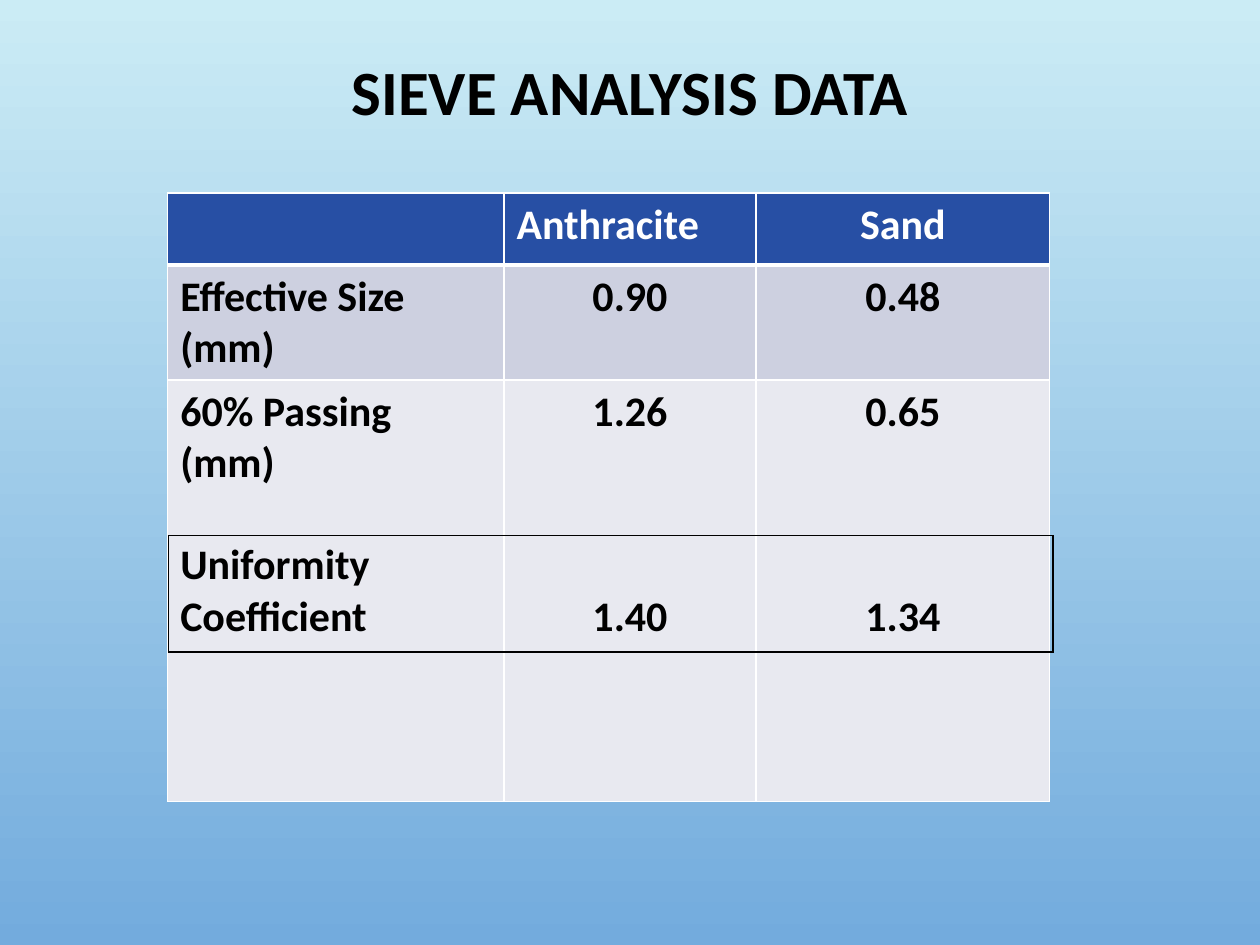
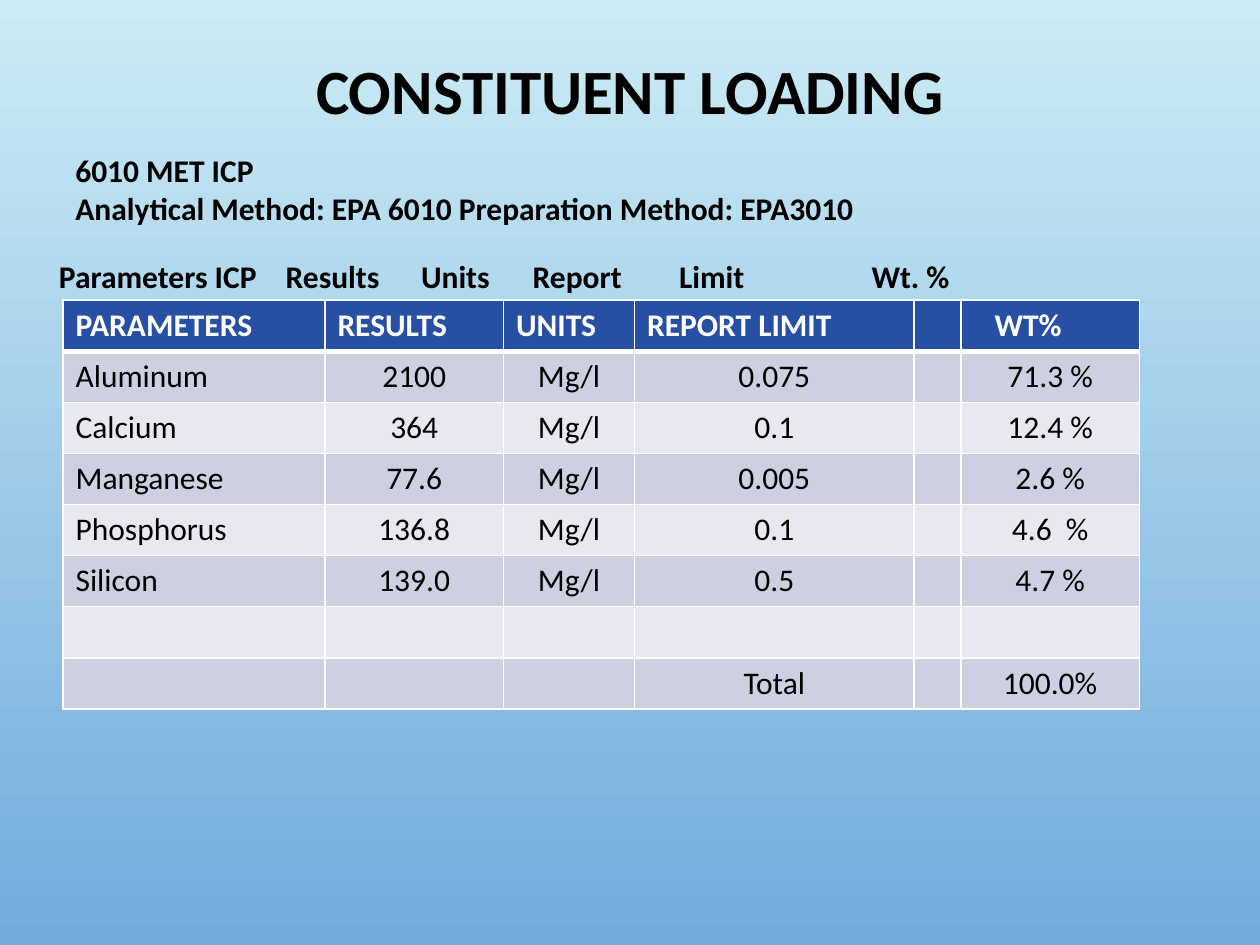
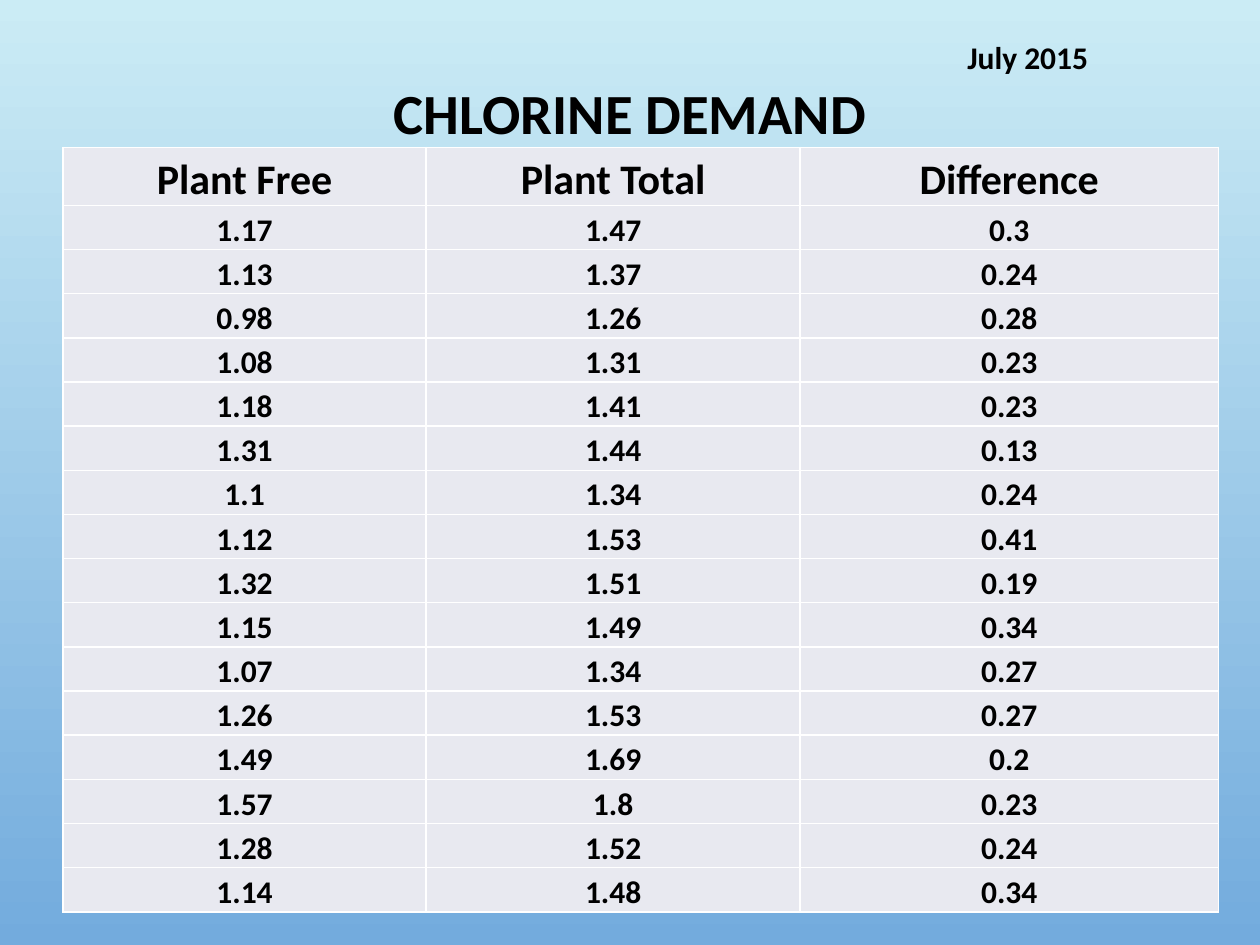
from dataclasses import dataclass

from lxml.etree import SubElement
from pptx import Presentation
from pptx.dml.color import RGBColor
from pptx.enum.text import MSO_ANCHOR as Anchor
from pptx.enum.text import MSO_AUTO_SIZE as AutoSize
from pptx.enum.text import PP_ALIGN as Align
from pptx.oxml.ns import qn
from pptx.util import Cm, Pt


@dataclass(frozen=True)
class Theme:
    """Colours, font and type sizes shared by all slides."""

    font: str = "Calibri"
    ink: str = "000000"
    white: str = "FFFFFF"
    header: str = "274FA4"
    band_dark: str = "CDD0E0"
    band_light: str = "E8E9F0"
    sky_top: str = "CBECF5"
    sky_bottom: str = "73ABDD"
    title_size: float = 36
    small_title_size: float = 32.4
    large_size: float = 24
    text_size: float = 18
    thin_line: float = 1
    thick_line: float = 3


THEME = Theme()
LARGE_LINE = 29.3

SIEVE_ROWS = [
    ["", "Anthracite", "Sand"],
    ["Effective Size (mm)", "0.90", "0.48"],
    ["60% Passing (mm)\nUniformity\nCoefficient", "1.26\n1.40", "0.65\n1.34"],
]

LOADING_ROWS = [
    ["PARAMETERS", "RESULTS", "UNITS", "REPORT LIMIT", "", "WT%"],
    ["Aluminum", "2100", "Mg/l", "0.075", "", "71.3 %"],
    ["Calcium", "364", "Mg/l", "0.1", "", "12.4 %"],
    ["Manganese", "77.6", "Mg/l", "0.005", "", "2.6 %"],
    ["Phosphorus", "136.8", "Mg/l", "0.1", "", "4.6  %"],
    ["Silicon", "139.0", "Mg/l", "0.5", "", "4.7 %"],
    [""] * 6,
    ["", "", "", "Total", "", "100.0%"],
]

CHLORINE_ROWS = [
    ["Plant Free", "Plant Total", "Difference"],
    ["1.17", "1.47", "0.3"],
    ["1.13", "1.37", "0.24"],
    ["0.98", "1.26", "0.28"],
    ["1.08", "1.31", "0.23"],
    ["1.18", "1.41", "0.23"],
    ["1.31", "1.44", "0.13"],
    ["1.1", "1.34", "0.24"],
    ["1.12", "1.53", "0.41"],
    ["1.32", "1.51", "0.19"],
    ["1.15", "1.49", "0.34"],
    ["1.07", "1.34", "0.27"],
    ["1.26", "1.53", "0.27"],
    ["1.49", "1.69", "0.2"],
    ["1.57", "1.8", "0.23"],
    ["1.28", "1.52", "0.24"],
    ["1.14", "1.48", "0.34"],
]


def format_text(text_frame, size, color=THEME.ink, bold=True, align=Align.LEFT):
    """Give every paragraph and run of a text frame one style."""
    for paragraph in text_frame.paragraphs:
        paragraph.alignment = align
        for font in [paragraph.font] + [run.font for run in paragraph.runs]:
            font.name = THEME.font
            font.size = Pt(size)
            font.bold = bold
            font.color.rgb = RGBColor.from_string(color)


def paint_background(master):
    """Fill the master with the vertical sky gradient."""
    fill = master.background.fill
    fill.gradient()
    fill.gradient_angle = 270
    for stop, color in zip(fill.gradient_stops, (THEME.sky_top, THEME.sky_bottom)):
        stop.color.rgb = RGBColor.from_string(color)


def add_titled_slide(presentation, title, top, height, size=THEME.title_size):
    """Add a title-only slide and place its centred title."""
    slide = presentation.slides.add_slide(presentation.slide_layouts[5])
    shape = slide.shapes.title
    shape.left, shape.top, shape.width, shape.height = Cm(1.9), Cm(top), Cm(21.6), Cm(height)
    text_frame = shape.text_frame
    text_frame.text = title
    text_frame.vertical_anchor = Anchor.MIDDLE
    text_frame.paragraphs[0].line_spacing = 0.9
    format_text(text_frame, size, align=Align.CENTER)
    return slide


def add_label(slide, text, left, top, width, height, tabs=()):
    """Add a bold text box, with tab stops if columns are needed."""
    text_frame = slide.shapes.add_textbox(Cm(left), Cm(top), Cm(width), Cm(height)).text_frame
    text_frame.word_wrap = True
    text_frame.auto_size = AutoSize.SHAPE_TO_FIT_TEXT
    text_frame.text = text
    if tabs:
        properties = text_frame.paragraphs[0]._p.get_or_add_pPr()
        tab_list = SubElement(properties, qn("a:tabLst"))
        for position in tabs:
            SubElement(tab_list, qn("a:tab"), pos=str(Cm(position)), algn="l")
    format_text(text_frame, THEME.text_size)


def set_borders(cell, color, bottom=THEME.thin_line):
    """Draw the four edges of a cell."""
    properties = cell._tc.get_or_add_tcPr()
    for side in "LRTB":
        width = bottom if side == "B" else THEME.thin_line
        line = SubElement(properties, qn(f"a:ln{side}"), w=str(Pt(width)))
        fill = SubElement(line, qn("a:solidFill"))
        SubElement(fill, qn("a:srgbClr"), val=color)


def add_plain_table(slide, left, top, widths, heights):
    """Add a table without built-in banding and return it."""
    frame = slide.shapes.add_table(
        len(heights), len(widths), Cm(left), Cm(top), Cm(sum(widths)), Cm(sum(heights))
    )
    table = frame.table
    table.first_row = table.horz_banding = False
    for column, width in zip(table.columns, widths):
        column.width = Cm(width)
    for row, height in zip(table.rows, heights):
        row.height = Cm(height)
    return table


def fill_cell(cell, text, fill, bottom=THEME.thin_line, **text_style):
    """Write and style one cell."""
    cell.text_frame.text = text
    set_borders(cell, THEME.white, bottom)
    cell.fill.solid()
    cell.fill.fore_color.rgb = RGBColor.from_string(fill)
    format_text(cell.text_frame, **text_style)


def add_banded_table(slide, left, top, widths, heights, rows, size, bold):
    """Add a table with a blue header, banded rows and centred values."""
    table = add_plain_table(slide, left, top, widths, heights)
    for row_index, row in enumerate(rows):
        for column_index, text in enumerate(row):
            cell = table.cell(row_index, column_index)
            if row_index == 0:
                fill_cell(cell, text, THEME.header, THEME.thick_line, size=size, color=THEME.white)
            else:
                band = THEME.band_dark if row_index % 2 else THEME.band_light
                align = Align.CENTER if column_index else Align.LEFT
                fill_cell(cell, text, band, size=size, bold=bold, align=align)
    return table


def add_value_table(slide, left, top, widths, heights, rows):
    """Add a light table of centred values seated at the cell bottom."""
    table = add_plain_table(slide, left, top, widths, heights)
    for row_index, row in enumerate(rows):
        size = THEME.text_size if row_index else THEME.large_size
        for column_index, text in enumerate(row):
            cell = table.cell(row_index, column_index)
            cell.margin_left = cell.margin_right = cell.margin_top = Cm(0.03)
            cell.margin_bottom = Cm(0)
            cell.vertical_anchor = Anchor.BOTTOM
            fill_cell(cell, text, THEME.band_light, size=size, align=Align.CENTER)


def add_outline(slide, left, top, width, height):
    """Add a one-cell table that frames a result row."""
    cell = add_plain_table(slide, left, top, [width], [height]).cell(0, 0)
    set_borders(cell, THEME.ink)
    cell.fill.background()


def build_sieve_slide(presentation):
    """Build the sieve analysis slide."""
    slide = add_titled_slide(presentation, "SIEVE ANALYSIS DATA", 1.07, 1.7)
    table = add_banded_table(
        slide, 3.38, 3.89, [6.78, 5.08, 5.92], [1.45, 2.32, 8.5],
        SIEVE_ROWS, THEME.large_size, True,
    )
    table.cell(0, 2).text_frame.paragraphs[0].alignment = Align.CENTER
    for column_index, skipped_lines in enumerate((1, 3, 3)):
        paragraph = table.cell(2, column_index).text_frame.paragraphs[1]
        paragraph.space_before = Pt(skipped_lines * LARGE_LINE)
    add_outline(slide, 3.4, 10.8, 17.83, 2.34)


def build_loading_slide(presentation):
    """Build the constituent loading slide."""
    slide = add_titled_slide(presentation, "CONSTITUENT LOADING", 0.84, 2.1)
    method = "6010 MET ICP\nAnalytical Method: EPA 6010 Preparation Method: EPA3010"
    add_label(slide, method, 1.27, 2.92, 21.4, 1.8)
    add_label(
        slide, "Parameters ICP\tResults\tUnits\tReport\tLimit\tWt. %",
        0.94, 5.05, 22.02, 1.02, tabs=(4.57, 7.3, 9.55, 12.5, 16.38),
    )
    table = add_banded_table(
        slide, 1.27, 6.05, [5.28, 3.6, 2.64, 5.64, 0.94, 3.6],
        [1.03] * len(LOADING_ROWS), LOADING_ROWS, THEME.text_size, False,
    )
    table.cell(0, 5).margin_left = Cm(0.68)


def build_chlorine_slide(presentation):
    """Build the chlorine demand slide."""
    slide = add_titled_slide(
        presentation, "CHLORINE DEMAND", 1.73, 1.24, THEME.small_title_size
    )
    heights = [1.17] + [0.89] * (len(CHLORINE_ROWS) - 1)
    add_value_table(slide, 1.27, 2.97, [7.32, 7.54, 8.43], heights, CHLORINE_ROWS)
    add_label(slide, "July 2015", 19.25, 0.64, 4.45, 1.02)


def main():
    """Build and save the presentation."""
    presentation = Presentation()
    presentation.slide_width, presentation.slide_height = Cm(25.4), Cm(19.05)
    paint_background(presentation.slide_master)
    build_sieve_slide(presentation)
    build_loading_slide(presentation)
    build_chlorine_slide(presentation)
    presentation.save("out.pptx")


if __name__ == "__main__":
    main()
